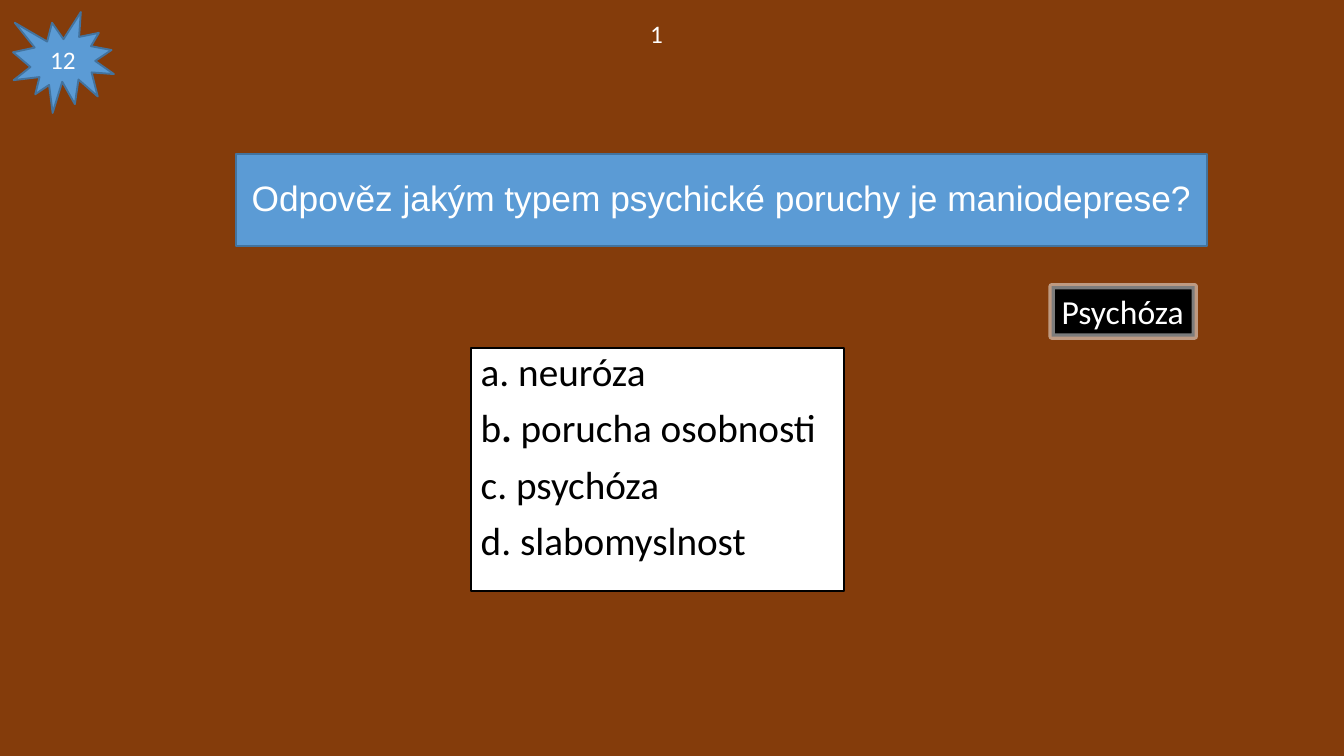
from lxml import etree
from pptx import Presentation
from pptx.dml.color import RGBColor
from pptx.enum.shapes import MSO_SHAPE
from pptx.enum.text import MSO_ANCHOR, MSO_AUTO_SIZE, PP_ALIGN
from pptx.oxml.ns import qn
from pptx.util import Inches, Pt

RECT, BURST = MSO_SHAPE.RECTANGLE, MSO_SHAPE.EXPLOSION1
TOP, MIDDLE = MSO_ANCHOR.TOP, MSO_ANCHOR.MIDDLE
LEFT, CENTER = PP_ALIGN.LEFT, PP_ALIGN.CENTER
GROW = MSO_AUTO_SIZE.SHAPE_TO_FIT_TEXT

BROWN = RGBColor(0x84, 0x3C, 0x0B)
BLUE = RGBColor(0x5B, 0x9B, 0xD5)
NAVY = RGBColor(0x43, 0x73, 0x9E)
PALE = RGBColor(0xF9, 0xF9, 0xF9)
WHITE = RGBColor(0xFF, 0xFF, 0xFF)
BLACK = RGBColor(0, 0, 0)

CHOICES = [
    [("a. neuróza", False)],
    [("b", False), (". ", True), ("porucha osobnosti", False)],
    [("c. psychóza", False)],
    [("d. slabomyslnost", False)],
]


def add_panel(slide, kind, box, fill, edge, width=1.35):
    panel = slide.shapes.add_shape(kind, *map(Inches, box))
    panel.shadow.inherit = False
    panel.fill.solid()
    panel.fill.fore_color.rgb = fill
    panel.line.color.rgb = edge
    panel.line.width = Pt(width)
    return panel


def write(par, text, size, color, font="Calibri", bold=False):
    run = par.add_run()
    run.text = text
    run.font.size = Pt(size)
    run.font.name = font
    run.font.color.rgb = color
    run.font.bold = bold


def add_title(slide, box):
    frame = add_panel(slide, RECT, box, BLUE, NAVY).text_frame
    frame.word_wrap = True
    frame.vertical_anchor = MIDDLE
    par = frame.paragraphs[0]
    par.alignment = CENTER
    par.line_spacing = 0.9
    write(par, "Odpověz jakým typem psychické poruchy je maniodeprese?",
          25.2, WHITE, "Arial")


def add_choices(slide, box):
    frame = add_panel(slide, RECT, box, WHITE, BLACK).text_frame
    frame.word_wrap = True
    frame.vertical_anchor = TOP
    for index, parts in enumerate(CHOICES):
        par = frame.add_paragraph() if index else frame.paragraphs[0]
        par.alignment = LEFT
        par.line_spacing = 0.9
        par.space_before = Pt(10 if index else 0)
        for text, bold in parts:
            write(par, text, 28, BLACK, bold=bold)


def add_badge(slide, box):
    frame = add_panel(slide, BURST, box, BLUE, NAVY).text_frame
    frame.vertical_anchor = MIDDLE
    par = frame.paragraphs[0]
    par.alignment = CENTER
    write(par, "12", 18, WHITE)


def add_score(slide, box):
    frame = slide.shapes.add_textbox(*map(Inches, box)).text_frame
    frame.word_wrap = False
    frame.auto_size = GROW
    write(frame.paragraphs[0], "1", 18, WHITE)


def add_answer(slide, box):
    """Place the answer tag with its half-transparent frame."""
    panel = add_panel(slide, RECT, box, BLACK, PALE, 4.6)
    edge = panel.line._get_or_add_ln().find(".//" + qn("a:srgbClr"))
    etree.SubElement(edge, qn("a:alpha"), val="50000")
    frame = panel.text_frame
    frame.word_wrap = False
    frame.auto_size = GROW
    frame.vertical_anchor = TOP
    par = frame.paragraphs[0]
    par.alignment = LEFT
    write(par, "Psychóza", 24, WHITE)


def main():
    deck = Presentation()
    deck.slide_width, deck.slide_height = Inches(13.33), Inches(7.5)
    slide = deck.slides.add_slide(deck.slide_layouts[6])
    slide.background.fill.solid()
    slide.background.fill.fore_color.rgb = BROWN
    add_title(slide, (2.34, 1.53, 9.63, 0.91))
    add_choices(slide, (4.67, 3.45, 3.7, 2.41))
    add_badge(slide, (0.13, 0.12, 1, 1))
    add_score(slide, (6.35, 0.13, 0.34, 0.4))
    add_answer(slide, (10.43, 2.84, 1.42, 0.5))
    deck.save("out.pptx")


if __name__ == "__main__":
    main()
